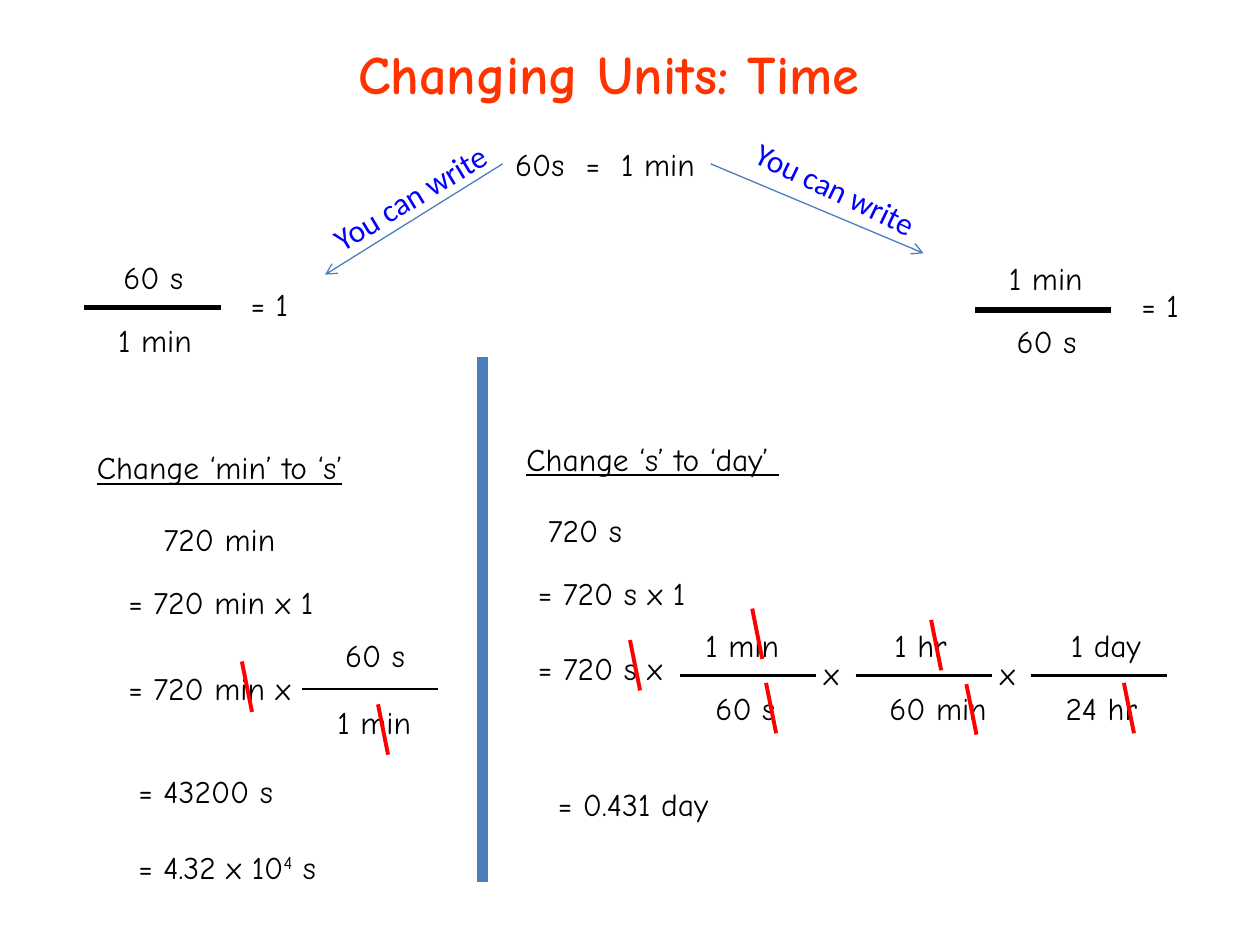
from lxml import etree
from pptx import Presentation
from pptx.dml.color import RGBColor
from pptx.enum.shapes import MSO_CONNECTOR
from pptx.enum.text import MSO_ANCHOR, MSO_AUTO_SIZE, PP_ALIGN
from pptx.oxml.ns import qn
from pptx.util import Pt

STRAIGHT = MSO_CONNECTOR.STRAIGHT
MIDDLE = MSO_ANCHOR.MIDDLE
FIT_SHAPE = MSO_AUTO_SIZE.SHAPE_TO_FIT_TEXT
CENTER = PP_ALIGN.CENTER

PX = 9144  # 100 px to the inch
HAND, PLAIN = "Comic Neue", "Calibri"
BLACK = RGBColor(0x00, 0x00, 0x00)
ORANGE = RGBColor(0xFF, 0x33, 0x00)
RED = RGBColor(0xFF, 0x00, 0x00)
BLUE = RGBColor(0x00, 0x00, 0xFF)
STEEL = RGBColor(0x4B, 0x7E, 0xBC)

prs = Presentation()
prs.slide_width, prs.slide_height = 1000 * PX, 750 * PX
s = prs.slides.add_slide(prs.slide_layouts[5])


def add_text(text, x, y, w, font=HAND, color=BLACK):
    sp = s.shapes.add_textbox(x * PX, y * PX, w * PX, 40 * PX)
    tf = sp.text_frame
    tf.word_wrap = False
    tf.auto_size = FIT_SHAPE
    p = tf.paragraphs[0]
    p.text = text
    p.font.name, p.font.size, p.font.color.rgb = font, Pt(18), color
    return sp


def add_line(x1, y1, x2, y2, color, width, arrow=False):
    line = s.shapes.add_connector(STRAIGHT, x1 * PX, y1 * PX, x2 * PX, y2 * PX)
    line.line.color.rgb = color
    line.line.width = Pt(width)
    spPr = line._element.spPr
    if arrow:
        etree.SubElement(spPr.find(qn("a:ln")), qn("a:tailEnd"), type="arrow")
    etree.SubElement(spPr, qn("a:effectLst"))
    return line


# Title
title = s.shapes.title
title.left, title.top, title.width, title.height = 33 * PX, 25 * PX, 900 * PX, 65 * PX
tf = title.text_frame
tf.text = "Changing Units: Time"
tf.vertical_anchor = MIDDLE
p = tf.paragraphs[0]
p.alignment = CENTER
p.font.name, p.font.size, p.font.bold = HAND, Pt(31), True
p.font.color.rgb = ORANGE

# Equality with an arrow to each way of writing it
equality = add_text("60s  =  1 min", 399, 110, 165)
for x1, x2, y2, side, label_x, label_y, angle in [
    (399, 258, 218, 1, 247, 136, 328.8),
    (564, 733, 201, 3, 585, 130, 25.7),
]:
    arrow = add_line(x1, 130, x2, y2, STEEL, 0.75, arrow=True)
    arrow.begin_connect(equality, side)
    add_text("You can write", label_x, label_y, 158, PLAIN, BLUE).rotation = angle

# Fractions: bar x, y, width; top text x, y, w; bottom text x, y, w
for bar_x, bar_y, bar_width, top, bottom in [
    (67, 244, 3, ("60 s", 88, 200, 78), ("1 min", 84, 250, 86)),
    (774, 246, 3, ("1 min", 791, 201, 86), ("60 s", 797, 251, 78)),
    (240, 547, 1.5, ("60 s", 264, 500, 86), ("1 min", 258, 553, 87)),
    (540, 536, 1.5, ("1 min", 550, 492, 86), ("60 s", 558, 542, 78)),
    (679, 536, 1.5, ("1 hr", 700, 492, 73), ("60 min", 696, 542, 106)),
    (818, 536, 1.5, ("1 day", 840, 492, 88), ("24 hr", 836, 542, 93)),
]:
    add_line(bar_x, bar_y, bar_x + 108, bar_y, BLACK, bar_width)
    add_text(*top)
    add_text(*bottom)

# Headings of the two worked examples
for text, x, y, w in [
    ("Change ‘min’ to ‘s’", 67, 351, 227),
    ("Change ‘s’ to ‘day’ ", 408, 344, 230),
]:
    add_text(text, x, y, w).text_frame.paragraphs[0].font.underline = True

# Steps of the working
for text, x, y, w in [
    ("= 1", 189, 221, 62),
    ("= 1", 896, 222, 62),
    ("720 min", 120, 408, 114),
    ("= 720 min x 1", 92, 458, 176),
    ("= 720 min x", 92, 526, 164),
    ("= 43200 s", 100, 608, 138),
    ("720 s", 425, 401, 86),
    ("= 720 s x 1", 417, 451, 148),
    ("= 720 s x", 417, 510, 137),
    ("x", 644, 514, 43),
    ("x", 784, 514, 43),
    ("= 0.431 day", 433, 618, 153),
]:
    add_text(text, x, y, w)

# Result in standard form, with a raised exponent
p = add_text("= 4.32 x 10", 100, 668, 180).text_frame.paragraphs[0]
r = p.add_run()
r.text = "4"
r._r.get_or_add_rPr().set("baseline", "30000")
p.add_run().text = " s"

# Divider between the examples
add_line(383, 283, 383, 700, STEEL, 6)

# Strokes through the units that cancel
for x, y in [
    (192, 525), (300, 559), (500, 508), (608, 542),
    (597, 483), (767, 543), (739, 492), (892, 542),
]:
    add_line(x, y, x + 8, y + 40, RED, 2.25)

prs.save("out.pptx")
